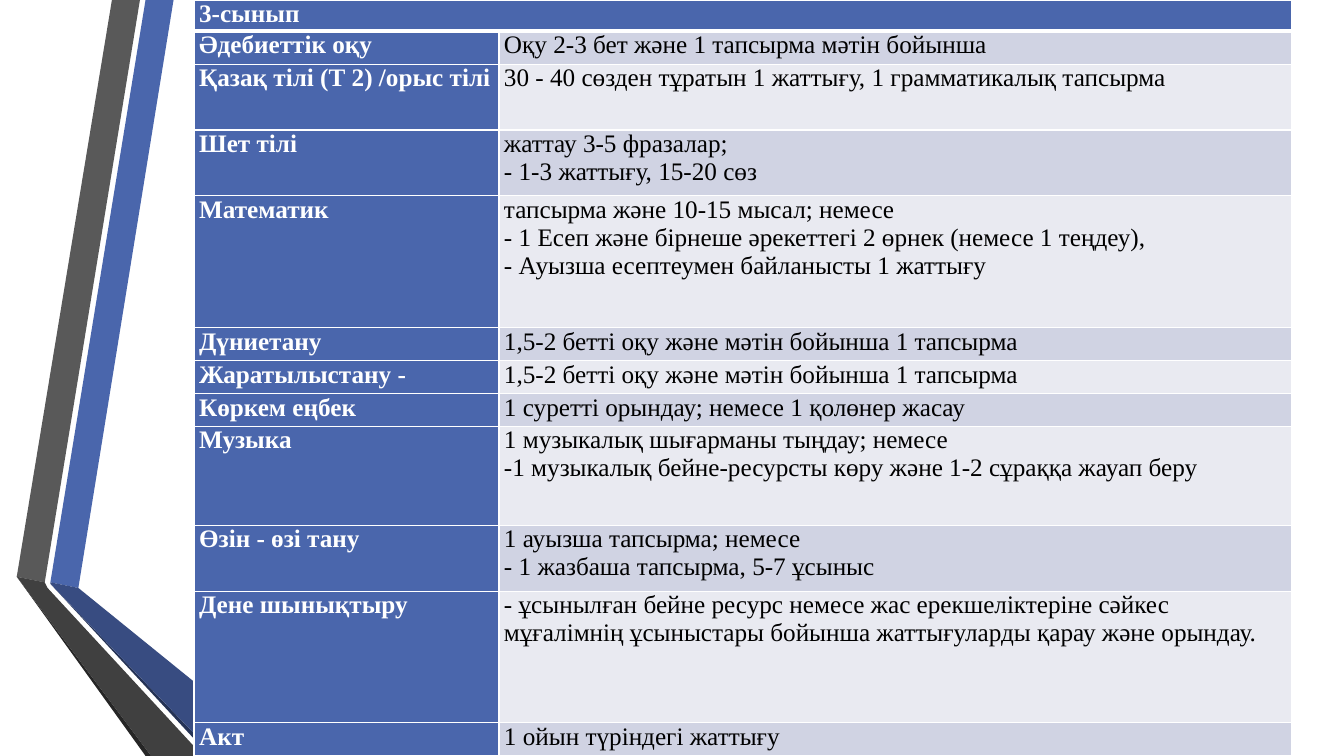
from dataclasses import dataclass

from lxml import etree
from pptx import Presentation
from pptx import util as u
from pptx.dml.color import RGBColor
from pptx.oxml.ns import qn


@dataclass(frozen=True)
class Theme:
    font: str = "Times New Roman"
    size: float = 18
    blue: str = "4A66AC"
    white: str = "FFFFFF"
    black: str = "000000"
    bands: tuple = ("D0D3E3", "E9EAF1")
    inset: float = 3.6
    thin: float = 1
    thick: float = 3


# Each ribbon: fill colour and outline points
RIBBONS = [
    ("4A66AC", [(36, 416), (55.7, 420), (124.5, 0), (104.5, 0)]),
    ("595959", [(100, 0), (80, 0), (11.8, 412.5), (31.5, 415.5)]),
    ("262626", [(11.8, 412.5), (104.5, 540), (108.5, 540)]),
    ("253356", [(36, 416.8), (149.5, 540), (154, 540)]),
    ("384C81", [(36, 416.8), (154, 540), (203.8, 540), (55.7, 420), (36, 416)]),
    ("404040", [(145, 540), (34.5, 420), (31.5, 415.5), (11.8, 412.5), (108.5, 540)]),
]

HEADING = "3-сынып"
# Each subject: name, homework, height in row units
SUBJECTS = [
    ("Әдебиеттік оқу", "Оқу 2-3 бет және 1 тапсырма мәтін бойынша", 1),
    ("Қазақ тілі (Т 2) /орыс тілі",
     "30 - 40 сөзден тұратын 1 жаттығу, 1 грамматикалық тапсырма", 2),
    ("Шет тілі", "жаттау 3-5 фразалар;\n- 1-3 жаттығу, 15-20 сөз", 2),
    ("Математик",
     "тапсырма және 10-15 мысал; немесе\n"
     "- 1 Есеп және бірнеше әрекеттегі 2 өрнек (немесе 1 теңдеу),\n"
     "- Ауызша есептеумен байланысты 1 жаттығу", 4),
    ("Дүниетану", "1,5-2 бетті оқу және мәтін бойынша 1 тапсырма", 1),
    ("Жаратылыстану -", "1,5-2 бетті оқу және мәтін бойынша 1 тапсырма", 1),
    ("Көркем еңбек", "1 суретті орындау; немесе 1 қолөнер жасау", 1),
    ("Музыка",
     "1 музыкалық шығарманы тыңдау; немесе\n"
     "-1 музыкалық бейне-ресурсты көру және 1-2 сұраққа жауап беру", 3),
    ("Өзін - өзі тану", "1 ауызша тапсырма; немесе\n- 1 жазбаша тапсырма, 5-7 ұсыныс", 2),
    ("Дене шынықтыру",
     "- ұсынылған бейне ресурс немесе жас ерекшеліктеріне сәйкес "
     "мұғалімнің ұсыныстары бойынша жаттығуларды қарау және орындау.", 4),
    ("Акт", "1 ойын түріндегі жаттығу", 1),
]
HEADING_HEIGHT = 22.3
ROW_UNIT = 23.53
COLUMN_WIDTHS = (217.8, 566.4)
TABLE_LEFT = 138.6


class Painter:
    """Holds the theme and the page being drawn."""

    def __init__(self, page, theme):
        self.page = page
        self.theme = theme

    def ribbon(self, color, points):
        builder = self.page.shapes.build_freeform(*points[0], scale=u.Pt(1))
        builder.add_line_segments(points[1:], close=True)
        shape = builder.convert_to_shape()
        shape.shadow.inherit = False
        shape.fill.solid()
        shape.fill.fore_color.rgb = RGBColor.from_string(color)
        shape.line.fill.background()

    def table(self, left, top, widths, heights):
        frame = self.page.shapes.add_table(
            len(heights), len(widths), u.Pt(left), u.Pt(top),
            u.Pt(sum(widths)), u.Pt(sum(heights)))
        for column, width in zip(frame.table.columns, widths):
            column.width = u.Pt(width)
        for row, height in zip(frame.table.rows, heights):
            row.height = u.Pt(height)
        return frame.table

    def border(self, cell, side, width):
        line = etree.SubElement(cell._tc.get_or_add_tcPr(), qn(f"a:ln{side}"),
                                w=str(u.Pt(width)))
        fill = etree.SubElement(line, qn("a:solidFill"))
        etree.SubElement(fill, qn("a:srgbClr"), val=self.theme.white)

    def cell(self, cell, content, *, fill, color, bold=False, top=None, bottom=None):
        theme = self.theme
        widths = {"L": theme.thin, "R": theme.thin,
                  "T": top or theme.thin, "B": bottom or theme.thin}
        for side, width in widths.items():
            self.border(cell, side, width)
        cell.fill.solid()
        cell.fill.fore_color.rgb = RGBColor.from_string(fill)
        cell.margin_left = cell.margin_right = u.Pt(theme.inset)
        cell.margin_top = cell.margin_bottom = 0
        cell.text_frame.text = content
        for para in cell.text_frame.paragraphs:
            for span in para.runs:
                span.font.name = theme.font
                span.font.size = u.Pt(theme.size)
                span.font.bold = bold
                span.font.color.rgb = RGBColor.from_string(color)


def main():
    deck = Presentation()
    deck.slide_width, deck.slide_height = u.Pt(960), u.Pt(540)
    blank = deck.slide_layouts[6]
    theme = Theme()
    painter = Painter(deck.slides.add_slide(blank), theme)

    for color, points in RIBBONS:
        painter.ribbon(color, points)

    heights = [HEADING_HEIGHT] + [units * ROW_UNIT for _, _, units in SUBJECTS]
    table = painter.table(TABLE_LEFT, 0, COLUMN_WIDTHS, heights)
    label = {"fill": theme.blue, "color": theme.white, "bold": True}

    table.cell(0, 0).merge(table.cell(0, 1))
    for column, content in enumerate((HEADING, "")):
        painter.cell(table.cell(0, column), content, bottom=theme.thick, **label)
    for row, (subject, homework, _) in enumerate(SUBJECTS, start=1):
        top = theme.thick if row == 1 else theme.thin
        band = theme.bands[(row - 1) % len(theme.bands)]
        painter.cell(table.cell(row, 0), subject, top=top, **label)
        painter.cell(table.cell(row, 1), homework, top=top, fill=band, color=theme.black)

    deck.save("out.pptx")


if __name__ == "__main__":
    main()
